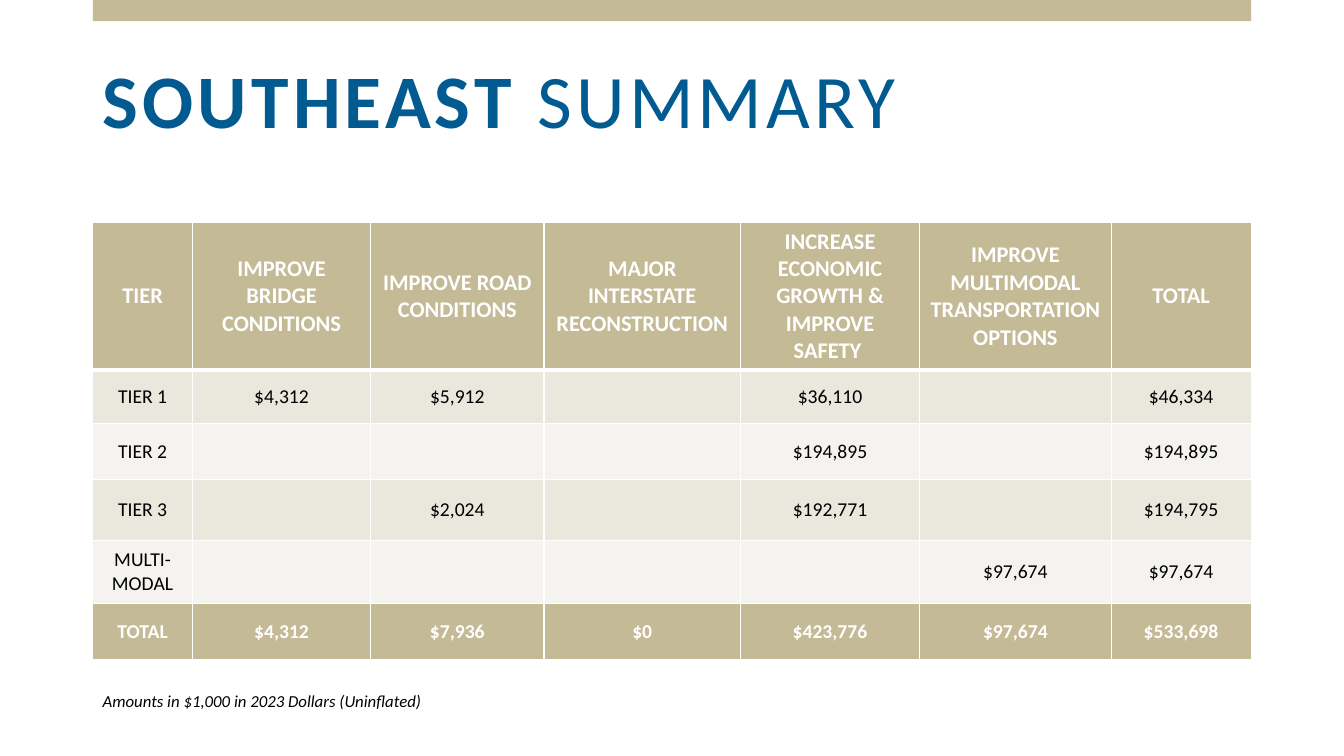
from lxml.etree import SubElement
from pptx import Presentation
from pptx.dml.color import RGBColor
from pptx.enum.shapes import MSO_SHAPE
from pptx.enum.text import MSO_ANCHOR, PP_ALIGN
from pptx.oxml.ns import qn
from pptx.util import Inches, Pt

TAN = RGBColor(0xC4, 0xBA, 0x96)
BLUE = RGBColor(0x01, 0x5A, 0x90)
SAND = RGBColor(0xEA, 0xE7, 0xDD)
PALE = RGBColor(0xF5, 0xF3, 0xEF)
WHITE = RGBColor(0xFF, 0xFF, 0xFF)
BLACK = RGBColor(0, 0, 0)

LEFT, WIDE = 0.92, 11.49
COLS = [0.99, 1.77, 1.72, 1.95, 1.78, 1.9, 1.39]
ROWS = [1.44, 0.53, 0.56, 0.6, 0.63, 0.56]
DATA = [
    ["TIER", "IMPROVE BRIDGE CONDITIONS", "IMPROVE ROAD CONDITIONS",
     "MAJOR INTERSTATE RECONSTRUCTION",
     "INCREASE ECONOMIC GROWTH & IMPROVE SAFETY ",
     "IMPROVE MULTIMODAL TRANSPORTATION OPTIONS", "TOTAL"],
    ["TIER 1", "$4,312", "$5,912", "", "$36,110", "", "$46,334"],
    ["TIER 2", "", "", "", "$194,895", "", "$194,895"],
    ["TIER 3", "", "$2,024", "", "$192,771", "", "$194,795"],
    ["MULTI-MODAL", "", "", "", "", "$97,674", "$97,674"],
    ["TOTAL", "$4,312", "$7,936", "$0", "$423,776", "$97,674", "$533,698"],
]


def add_run(para, text, size, color, bold=False, italic=False):
    run = para.add_run()
    run.text = text
    font = run.font
    font.name, font.size = "Calibri", Pt(size)
    font.bold, font.italic = bold, italic
    font.color.rgb = color
    return run


def add_bar(slide, left, top, width, height):
    bar = slide.shapes.add_shape(
        MSO_SHAPE.RECTANGLE, Inches(left), Inches(top), Inches(width), Inches(height))
    bar.shadow.inherit = False
    bar.fill.solid()
    bar.fill.fore_color.rgb = TAN
    bar.line.fill.background()


def set_title(slide, left, top, width, height):
    title = slide.shapes.title
    title.left, title.top = Inches(left), Inches(top)
    title.width, title.height = Inches(width), Inches(height)
    frame = title.text_frame
    frame.word_wrap = True
    frame.vertical_anchor = MSO_ANCHOR.MIDDLE
    para = frame.paragraphs[0]
    para.alignment = PP_ALIGN.LEFT
    para.line_spacing = 0.9
    for text, bold in (("SOUTHEAST ", True), ("SUMMARY", False)):
        run = add_run(para, text, 54, BLUE, bold)
        run.font._element.set("spc", "300")


def set_edges(cell, row):
    props = cell._tc.get_or_add_tcPr()
    widths = {"lnL": 1, "lnR": 1, "lnT": 3 if row == 1 else 1, "lnB": 3 if row == 0 else 1}
    for name, width in widths.items():
        line = SubElement(props, qn("a:" + name), w=str(Pt(width)))
        fill = SubElement(line, qn("a:solidFill"))
        SubElement(fill, qn("a:srgbClr"), val=str(WHITE))


def fill_cell(cell, text, row, col):
    head = row == 0
    strong = head or row == len(ROWS) - 1
    set_edges(cell, row)
    cell.fill.solid()
    cell.fill.fore_color.rgb = TAN if strong else SAND if row % 2 else PALE
    cell.vertical_anchor = MSO_ANCHOR.MIDDLE
    if not head and col > 0:
        cell.margin_left = cell.margin_right = 0
        cell.margin_top = cell.margin_bottom = 0
    if text:
        para = cell.text_frame.paragraphs[0]
        para.alignment = PP_ALIGN.CENTER
        add_run(para, text, 16 if head else 14, WHITE if strong else BLACK, strong)


def add_grid(slide, left, top, width, height):
    table = slide.shapes.add_table(
        len(ROWS), len(COLS), Inches(left), Inches(top), Inches(width), Inches(height)).table
    for col, size in zip(table.columns, COLS):
        col.width = Inches(size * width / sum(COLS))
    for row, size in zip(table.rows, ROWS):
        row.height = Inches(size * height / sum(ROWS))
    for row, texts in enumerate(DATA):
        for col, text in enumerate(texts):
            fill_cell(table.cell(row, col), text, row, col)


def add_note(slide, left, top, width, height):
    box = slide.shapes.add_textbox(Inches(left), Inches(top), Inches(width), Inches(height))
    frame = box.text_frame
    frame.word_wrap = True
    add_run(frame.paragraphs[0], "Amounts in $1,000 in 2023 Dollars (Uninflated)",
            12, BLACK, italic=True)


def main():
    deck = Presentation()
    deck.slide_width, deck.slide_height = Inches(13.33), Inches(7.5)
    slide = deck.slides.add_slide(deck.slide_layouts[5])
    add_bar(slide, LEFT, 0, WIDE, 0.21)
    set_title(slide, LEFT, 0.32, WIDE, 1.43)
    add_grid(slide, LEFT, 2.21, WIDE, 4.32)
    add_note(slide, LEFT, 6.8, 5.36, 0.3)
    deck.save("out.pptx")


if __name__ == "__main__":
    main()
